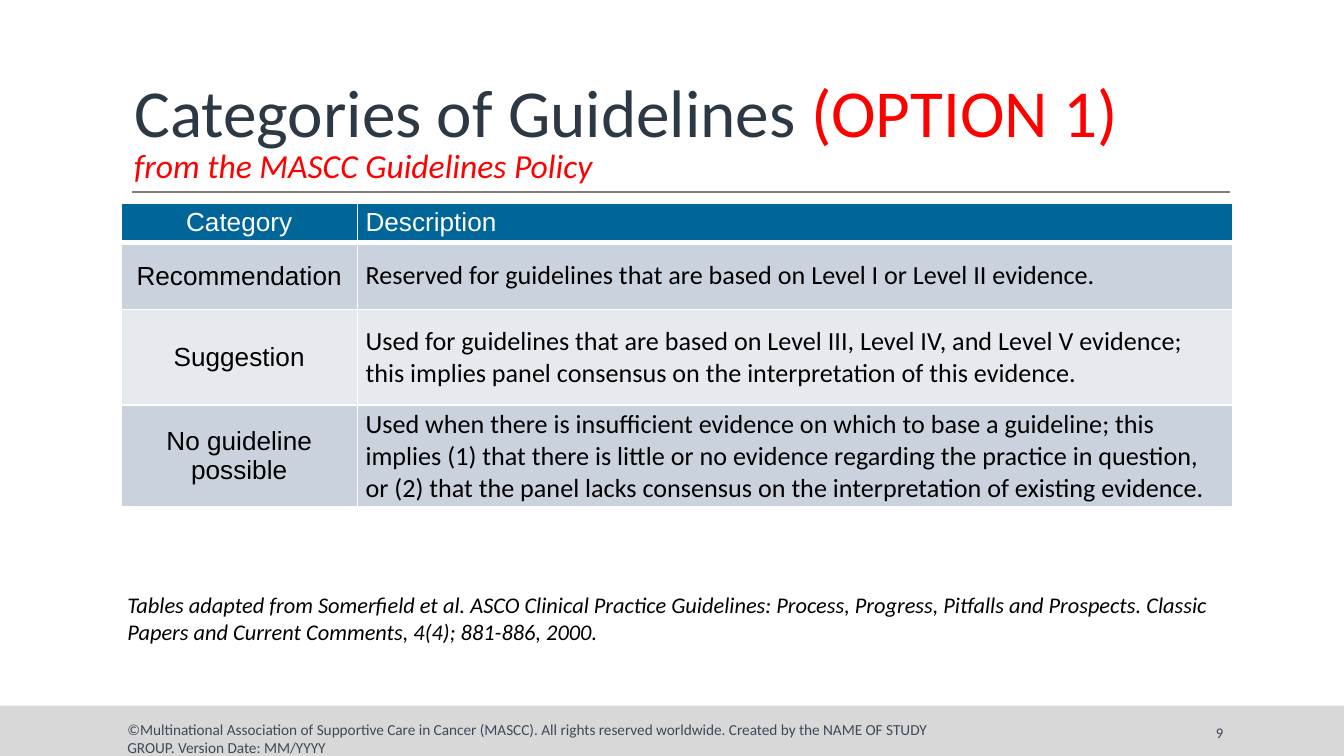
from lxml.etree import SubElement
from pptx import Presentation
from pptx.dml.color import RGBColor
from pptx.enum.shapes import MSO_CONNECTOR, MSO_SHAPE
from pptx.enum.text import MSO_ANCHOR as Anchor, PP_ALIGN as Align
from pptx.oxml.ns import qn
from pptx.util import Inches, Pt

SLATE, RED, FOOTER_TEXT = "2C3843", "FF0000", "3D4A59"
HEADER_FILL, BAND_FILLS = "006699", ("CAD2DD", "E6EAEF")

COLUMN_WIDTHS = (1.76, 6.51)
ROW_HEIGHTS = (0.29, 0.5, 0.71, 0.68)
GUIDELINES = (
    ("Category", "Description"),
    ("Recommendation",
     "Reserved for guidelines that are based on Level I or Level II evidence."),
    ("Suggestion",
     "Used for guidelines that are based on Level III, Level IV, and Level V evidence; "
     "this implies panel consensus on the interpretation of this evidence."),
    ("No guideline possible",
     "Used when there is insufficient evidence on which to base a guideline; this implies "
     "(1) that there is little or no evidence regarding the practice in question, or (2) that "
     "the panel lacks consensus on the interpretation of existing evidence."),
)
CITATION = ("Tables adapted from Somerfield et al. ASCO Clinical Practice Guidelines: Process, "
            "Progress, Pitfalls and Prospects. Classic Papers and Current Comments, 4(4); "
            "881-886, 2000.")
COPYRIGHT = ("©Multinational Association of Supportive Care in Cancer (MASCC). All rights reserved "
             "worldwide. Created by the NAME OF STUDY GROUP. Version Date: MM/YYYY")


def rgb(color):
    return RGBColor.from_string(color)


def add_run(paragraph, text, color, size, name="Calibri", italic=False):
    run = paragraph.add_run()
    run.text = text
    font_format = {"size": Pt(size), "name": name, "italic": italic}
    for attribute, value in font_format.items():
        setattr(run.font, attribute, value)
    run.font.color.rgb = rgb(color)


def add_text_box(slide, box, anchor=Anchor.TOP, align=Align.LEFT):
    """Add an empty wrapping text box and return its first paragraph."""
    frame = slide.shapes.add_textbox(*map(Inches, box)).text_frame
    frame.word_wrap = True
    frame.vertical_anchor = anchor
    paragraph = frame.paragraphs[0]
    paragraph.alignment = align
    return paragraph


def add_footer_band(slide):
    band = slide.shapes.add_shape(
        MSO_SHAPE.RECTANGLE, *map(Inches, (0, 5.25, 10, 0.38)))
    band.shadow.inherit = False
    band.fill.solid()
    band.fill.fore_color.rgb = rgb("D8D8D8")
    band.line.fill.background()


def add_title_rule(slide):
    rule = slide.shapes.add_connector(
        MSO_CONNECTOR.STRAIGHT, *map(Inches, (0.98, 1.43, 9.15, 1.43)))
    rule.line.color.rgb = rgb("7F7F7F")
    rule.line.width = Pt(0.75)
    SubElement(rule._element.spPr, qn("a:effectLst"))


def add_title(slide):
    title = add_text_box(slide, (0.9, 0.24, 8.25, 1.19), Anchor.BOTTOM)
    title.line_spacing = 0.85
    add_run(title, "Categories of Guidelines ", SLATE, 36)
    add_run(title, "(OPTION 1)", RED, 36)
    title.add_line_break()
    add_run(title, "from the MASCC Guidelines Policy", RED, 18, italic=True)


def set_borders(cell, bottom_width):
    """Draw white cell borders; they must precede the fill in the cell's XML."""
    widths = {"a:lnL": 1, "a:lnR": 1, "a:lnT": 1, "a:lnB": bottom_width}
    for side, width in widths.items():
        border = SubElement(cell._tc.get_or_add_tcPr(), qn(side), w=str(Pt(width)))
        fill = SubElement(border, qn("a:solidFill"))
        SubElement(fill, qn("a:srgbClr"), val="FFFFFF")


def format_cell(cell, text, row, column):
    is_header, is_category = row == 0, column == 0
    set_borders(cell, 3 if is_header else 1)
    cell.fill.solid()
    cell.fill.fore_color.rgb = rgb(HEADER_FILL if is_header else BAND_FILLS[(row - 1) % 2])
    cell_format = {
        "vertical_anchor": Anchor.MIDDLE,
        "margin_left": Inches(0.06), "margin_right": Inches(0.06),
        "margin_top": Inches(0.03), "margin_bottom": Inches(0.03),
    }
    for attribute, value in cell_format.items():
        setattr(cell, attribute, value)
    paragraph = cell.text_frame.paragraphs[0]
    paragraph.alignment = Align.CENTER if is_category else Align.LEFT
    add_run(paragraph, text, "FFFFFF" if is_header else "000000", 14,
            "Arial" if is_header or is_category else "Calibri")


def add_guidelines_table(slide):
    frame = slide.shapes.add_table(
        len(ROW_HEIGHTS), len(COLUMN_WIDTHS), *map(Inches, (0.9, 1.51, 8.26, 2.27)))
    table = frame.table
    for column, width in zip(table.columns, COLUMN_WIDTHS):
        column.width = Inches(width)
    for row, height in zip(table.rows, ROW_HEIGHTS):
        row.height = Inches(height)
    frame.width, frame.height = Inches(8.26), Inches(2.27)
    for row, texts in enumerate(GUIDELINES):
        for column, text in enumerate(texts):
            format_cell(table.cell(row, column), text, row, column)


def main():
    presentation = Presentation()
    presentation.slide_width = Inches(10)
    presentation.slide_height = presentation.slide_width * 9 // 16
    slide = presentation.slides.add_slide(presentation.slide_layouts[6])

    add_footer_band(slide)
    add_title_rule(slide)
    add_title(slide)
    page_number = add_text_box(slide, (8.12, 5.3, 1.08, 0.3), Anchor.MIDDLE, Align.RIGHT)
    add_run(page_number, "9", FOOTER_TEXT, 7.9)
    copyright_line = add_text_box(slide, (0.85, 5.31, 6.5, 0.3))
    add_run(copyright_line, COPYRIGHT, FOOTER_TEXT, 8.2)
    add_guidelines_table(slide)
    citation = add_text_box(slide, (0.85, 4.35, 8.43, 0.5))
    add_run(citation, CITATION, "000000", 12, italic=True)

    presentation.save("out.pptx")


if __name__ == "__main__":
    main()
